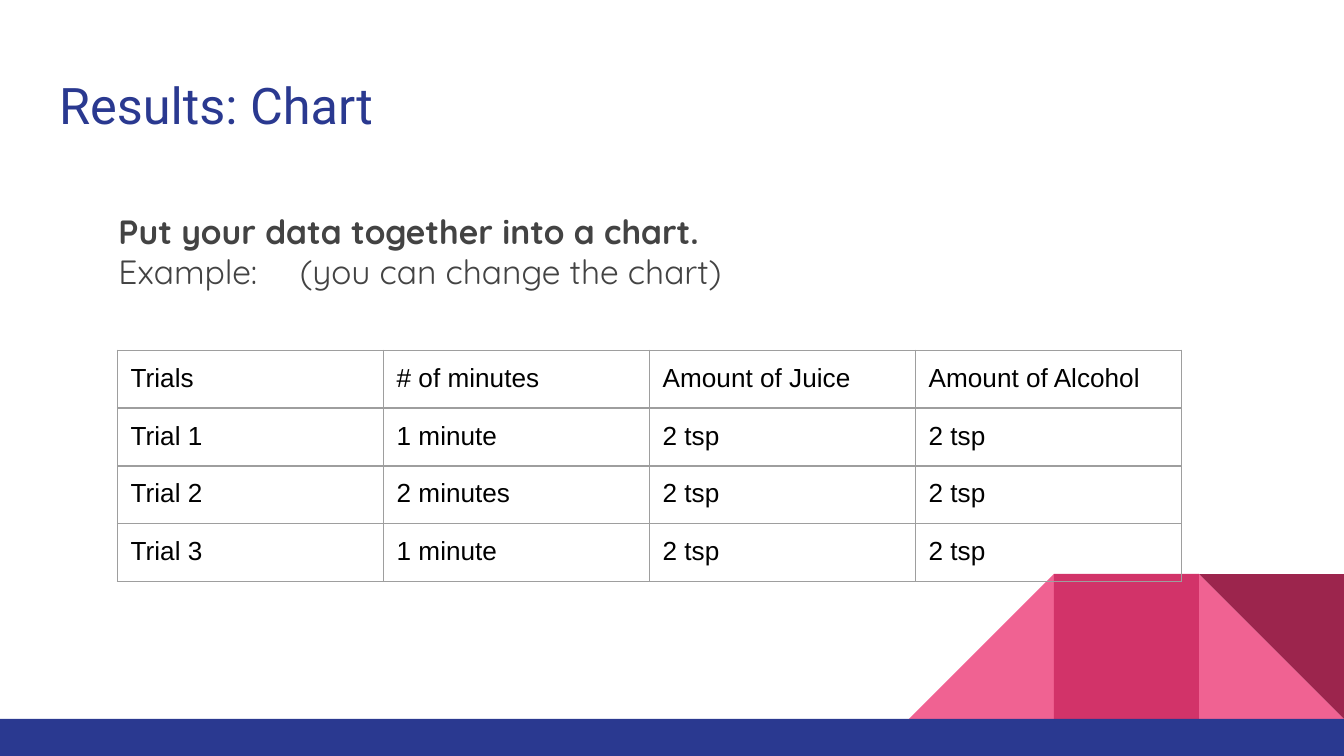
from lxml import etree
from pptx import Presentation
from pptx.dml.color import RGBColor
from pptx.enum.shapes import MSO_SHAPE
from pptx.enum.text import MSO_ANCHOR
from pptx.oxml.ns import qn
from pptx.util import Cm, Pt

RECTANGLE = MSO_SHAPE.RECTANGLE
RIGHT_TRIANGLE = MSO_SHAPE.RIGHT_TRIANGLE
TOP = MSO_ANCHOR.TOP
MIDDLE = MSO_ANCHOR.MIDDLE

WIDTH, HEIGHT = 25.4, 14.29
BAR_HEIGHT = 0.7
INSET = Cm(0.25)
NAVY, PINK, CRIMSON, WINE = "2A3990", "F06292", "D23369", "9C254D"
GREY, BLACK, BORDER = "434343", "000000", "9E9E9E"

TRIALS = [
    ["Trials", "# of minutes", "Amount of Juice", "Amount of Alcohol"],
    ["Trial 1", "1 minute", "2 tsp", "2 tsp"],
    ["Trial 2", "2 minutes", "2 tsp", "2 tsp"],
    ["Trial 3", "1 minute", "2 tsp", "2 tsp"],
]


def color(hex_string):
    return RGBColor.from_string(hex_string)


def add_run(paragraph, text, font, size, hex_color, bold=False):
    run = paragraph.add_run()
    run.text = text
    run.font.name = font
    run.font.size = Pt(size)
    run.font.bold = bold
    run.font.color.rgb = color(hex_color)


def add_plain_shape(slide, kind, left, top, width, height, fill, rotation=0):
    shape = slide.shapes.add_shape(kind, Cm(left), Cm(top), Cm(width), Cm(height))
    shape.shadow.inherit = False
    shape.fill.solid()
    shape.fill.fore_color.rgb = color(fill)
    shape.line.fill.background()
    shape.rotation = rotation


def add_text_frame(slide, left, top, width, height, anchor):
    box = slide.shapes.add_textbox(Cm(left), Cm(top), Cm(width), Cm(height))
    frame = box.text_frame
    frame.word_wrap = True
    frame.vertical_anchor = anchor
    frame.margin_left = frame.margin_right = INSET
    frame.margin_top = frame.margin_bottom = INSET
    return frame


def add_tab_stop(paragraph, position):
    properties = paragraph._p.get_or_add_pPr()
    tabs = etree.SubElement(properties, qn("a:tabLst"))
    etree.SubElement(tabs, qn("a:tab"), pos=str(Cm(position)), algn="l")


def add_corner_ornament(slide, right, bottom, side):
    """Row of three squares, the last one split into two triangles."""
    top = bottom - side
    pieces = [
        (1, RIGHT_TRIANGLE, PINK, 0),
        (3, RIGHT_TRIANGLE, PINK, 270),
        (2, RECTANGLE, CRIMSON, 0),
        (1, RIGHT_TRIANGLE, WINE, 180),
    ]
    for steps, kind, fill, rotation in pieces:
        add_plain_shape(slide, kind, right - steps * side, top, side, side, fill, rotation)


def add_title(slide, left, top, width, height):
    frame = add_text_frame(slide, left, top, width, height, MIDDLE)
    add_run(frame.paragraphs[0], "Results: Chart", "Roboto", 27, NAVY)


def add_instructions(slide, left, top, width, height):
    frame = add_text_frame(slide, left, top, width, height, TOP)
    add_run(frame.paragraphs[0], "Put your data together into a chart.",
            "Quicksand", 18, GREY, bold=True)
    example = frame.add_paragraph()
    add_tab_stop(example, 3.43)
    add_run(example, "Example:\t(you can change the chart)", "Quicksand", 18, GREY)


def add_cell_borders(cell):
    properties = cell._tc.get_or_add_tcPr()
    for edge in ("a:lnL", "a:lnR", "a:lnT", "a:lnB"):
        line = etree.SubElement(properties, qn(edge), w=str(Pt(0.75)))
        fill = etree.SubElement(line, qn("a:solidFill"))
        etree.SubElement(fill, qn("a:srgbClr"), val=BORDER)


def add_trials_table(slide, left, top, width, height):
    shape = slide.shapes.add_table(len(TRIALS), len(TRIALS[0]),
                                   Cm(left), Cm(top), Cm(width), Cm(height))
    table = shape.table
    table.first_row = table.horz_banding = False
    for row_index, row in enumerate(TRIALS):
        for column_index, text in enumerate(row):
            cell = table.cell(row_index, column_index)
            cell.margin_left = cell.margin_right = INSET
            cell.margin_top = cell.margin_bottom = INSET
            add_cell_borders(cell)
            cell.fill.background()
            add_run(cell.text_frame.paragraphs[0], text, "Arial", 14, BLACK)


def main():
    presentation = Presentation()
    presentation.slide_width = Cm(WIDTH)
    presentation.slide_height = Cm(HEIGHT)
    slide = presentation.slides.add_slide(presentation.slide_layouts[6])
    slide.background.fill.solid()
    slide.background.fill.fore_color.rgb = color("FFFFFF")

    bar_top = HEIGHT - BAR_HEIGHT
    add_corner_ornament(slide, WIDTH, bar_top, 2.74)
    add_plain_shape(slide, RECTANGLE, 0, bar_top, WIDTH, BAR_HEIGHT, NAVY)
    add_title(slide, 0.87, 1.14, 23.67, 1.68)
    add_instructions(slide, 1.99, 3.73, 21.43, 2.06)
    add_trials_table(slide, 2.22, 6.62, 20.11, 4.26)
    presentation.save("out.pptx")


if __name__ == "__main__":
    main()
